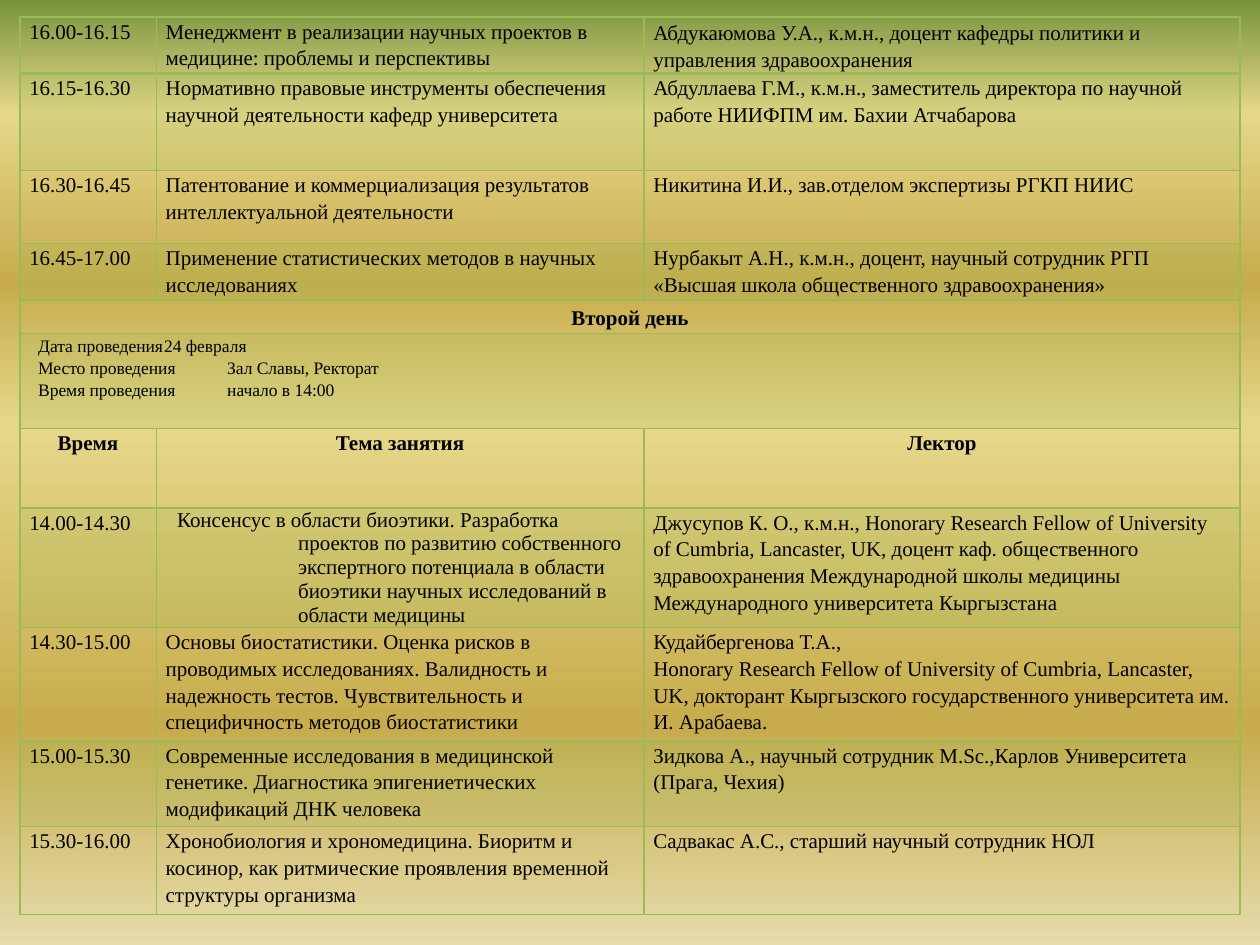
from dataclasses import dataclass

from lxml.etree import SubElement
from pptx import Presentation
from pptx.dml.color import RGBColor
from pptx.enum.text import MSO_ANCHOR as Anchor, PP_ALIGN as Align
from pptx.oxml.ns import qn
from pptx.util import Cm, Pt

COLORS = {
    "text": "000000",
    "green": "9BBB59",
    "moss": "77933C",
    "straw": "E6D78A",
    "gold": "C7AC4C",
    "sand": "E6DCAC",
}
GRADIENT = [(0, "moss"), (12, "straw"), (30, "gold"),
            (45, "straw"), (77, "gold"), (100, "sand")]
FONT = "Times New Roman"
COLUMNS = [2.75, 9.83, 12.02]


@dataclass
class Style:
    size: int = 12
    bold: bool = False
    align: Align = Align.LEFT
    spacing: float | Pt = 1.15
    left: float = 0
    indent: float = 0
    tab: float = 0
    tab_align: str = "l"


@dataclass
class Row:
    height: float
    texts: list[str]
    style: Style
    merged: bool = False


BODY = Style()
HEAD = Style(bold=True, align=Align.CENTER)
DETAILS = Style(size=10, left=0.18, tab=24.05, tab_align="r")
HANGING = Style(spacing=Pt(13.6), left=2.67, indent=-2.44)

ROWS = [
    Row(1.14, ["16.00-16.15",
               "Менеджмент в реализации научных проектов в медицине: проблемы и перспективы",
               "Абдукаюмова У.А., к.м.н., доцент кафедры политики и управления здравоохранения"], BODY),
    Row(1.96, ["16.15-16.30",
               "Нормативно правовые инструменты обеспечения научной деятельности кафедр университета",
               "Абдуллаева Г.М., к.м.н., заместитель директора по научной работе НИИФПМ им. Бахии Атчабарова"], BODY),
    Row(1.47, ["16.30-16.45",
               "Патентование и коммерциализация результатов интеллектуальной деятельности",
               "Никитина И.И., зав.отделом экспертизы РГКП НИИС"], BODY),
    Row(1.14, ["16.45-17.00",
               "Применение статистических методов в научных исследованиях",
               "Нурбакыт А.Н., к.м.н., доцент, научный сотрудник РГП "
               "«Высшая школа общественного здравоохранения»"], BODY),
    Row(0.68, ["Второй день"], HEAD, merged=True),
    Row(1.91, ["Дата проведения\t24 февраля\n"
               "Место проведения\tЗал Славы, Ректорат\n"
               "Время проведения\tначало в 14:00"], DETAILS, merged=True),
    Row(1.6, ["Время", "Тема занятия", "Лектор"], HEAD),
    Row(2.41, ["14.00-14.30",
               "Консенсус в области биоэтики. Разработка проектов по развитию собственного "
               "экспертного потенциала в области биоэтики научных исследований в области медицины",
               "Джусупов К. О., к.м.н., Honorary Research Fellow of University of Cumbria, "
               "Lancaster, UK, доцент каф. общественного здравоохранения Международной школы "
               "медицины Международного университета Кыргызстана"], BODY),
    Row(2.29, ["14.30-15.00",
               "Основы биостатистики. Оценка рисков в проводимых исследованиях. Валидность и "
               "надежность тестов. Чувствительность и специфичность методов биостатистики",
               "Кудайбергенова Т.А.,\n"
               "Honorary Research Fellow of University of Cumbria, Lancaster, UK, докторант "
               "Кыргызского государственного университета им. И. Арабаева."], BODY),
    Row(1.72, ["15.00-15.30",
               "Современные исследования в медицинской генетике. Диагностика эпигениетических "
               "модификаций ДНК человека",
               "Зидкова А., научный сотрудник M.Sc.,Карлов Университета (Прага, Чехия)"], BODY),
    Row(1.78, ["15.30-16.00",
               "Хронобиология и хрономедицина. Биоритм и косинор, как ритмические проявления "
               "временной структуры организма",
               "Садвакас А.С., старший научный сотрудник НОЛ"], BODY),
]


def rgb(name: str) -> RGBColor:
    return RGBColor.from_string(COLORS[name])


def paint_background(s) -> None:
    fill = s.background.fill
    fill.gradient()
    fill.gradient_angle = 270
    stops = s.element.find(".//" + qn("a:gsLst"))
    for stop in list(stops):
        stops.remove(stop)
    for position, name in GRADIENT:
        stop = SubElement(stops, qn("a:gs"), pos=str(position * 1000))
        SubElement(stop, qn("a:srgbClr"), val=COLORS[name])


def write_text(cell, text: str, style: Style) -> None:
    tf = cell.text_frame
    for i, line in enumerate(text.split("\n")):
        p = tf.add_paragraph() if i else tf.paragraphs[0]
        p.alignment = style.align
        p.line_spacing = style.spacing
        props = p._p.get_or_add_pPr()
        props.set("marL", str(Cm(style.left)))
        props.set("indent", str(Cm(style.indent)))
        if style.tab:
            tabs = SubElement(props, qn("a:tabLst"))
            SubElement(tabs, qn("a:tab"), pos=str(Cm(style.tab)), algn=style.tab_align)
        r = p.add_run()
        r.text = line
        r.font.name = FONT
        r.font.size = Pt(style.size)
        r.font.bold = style.bold
        r.font.color.rgb = rgb("text")


def format_cell(cell, banded: bool, top: float, bottom: float) -> None:
    cell.margin_left = cell.margin_right = Cm(0.19)
    cell.margin_top = cell.margin_bottom = 0
    props = cell._tc.get_or_add_tcPr()
    for side, width in {"L": 1, "R": 1, "T": top, "B": bottom}.items():
        line = SubElement(props, qn(f"a:ln{side}"), w=str(Pt(width)))
        solid = SubElement(line, qn("a:solidFill"))
        SubElement(solid, qn("a:srgbClr"), val=COLORS["green"])
    if banded:
        cell.fill.solid()
        cell.fill.fore_color.rgb = rgb("green")
        color = props.find(qn("a:solidFill")).find(qn("a:srgbClr"))
        SubElement(color, qn("a:alpha"), val="20000")
    else:
        cell.fill.background()


def add_schedule(s, rows: list[Row]) -> None:
    height = sum(row.height for row in rows)
    table = s.shapes.add_table(len(rows), len(COLUMNS), Cm(0.4), Cm(0.34),
                               Cm(sum(COLUMNS)), Cm(height)).table
    table.first_row = table.horz_banding = False
    for column, width in zip(table.columns, COLUMNS):
        column.width = Cm(width)
    for i, row in enumerate(rows):
        table.rows[i].height = Cm(row.height)
        for j in range(len(COLUMNS)):
            format_cell(table.cell(i, j), i % 2 == 1,
                        2 if i == 1 else 1, 2 if i == 0 else 1)
        if row.merged:
            table.cell(i, 0).merge(table.cell(i, len(COLUMNS) - 1))
        for j, text in enumerate(row.texts):
            hanging = text.startswith("Консенсус")
            write_text(table.cell(i, j), text, HANGING if hanging else row.style)
    for i, j in [(0, 2), (4, 0)]:
        table.cell(i, j).vertical_anchor = Anchor.MIDDLE


def main() -> None:
    prs = Presentation()
    prs.slide_width, prs.slide_height = Cm(25.4), Cm(19.05)
    s = prs.slides.add_slide(prs.slide_layouts[6])
    paint_background(s)
    add_schedule(s, ROWS)
    prs.save("out.pptx")


if __name__ == "__main__":
    main()
